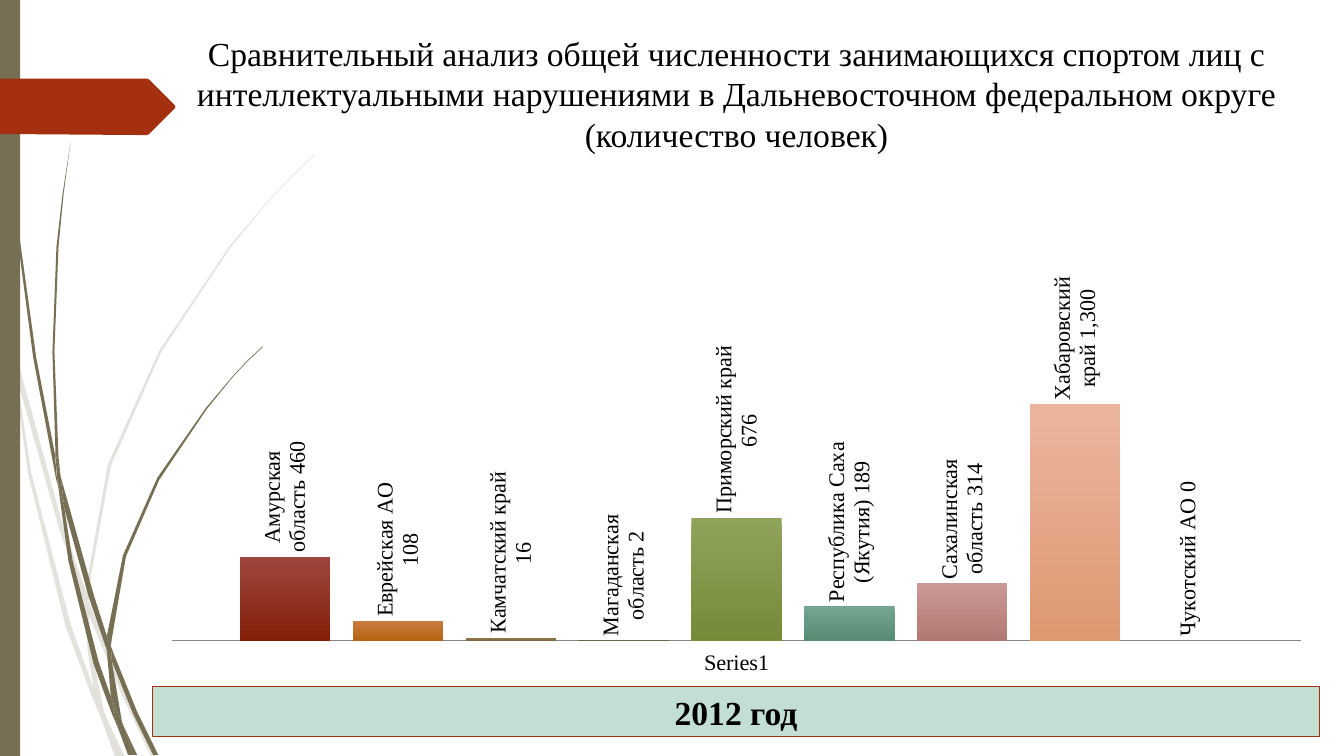
from typing import Any, NamedTuple

from lxml.etree import SubElement
from pptx import Presentation
from pptx.chart.data import CategoryChartData
from pptx.dml.color import RGBColor
from pptx.enum.chart import XL_CHART_TYPE as ChartType
from pptx.enum.chart import XL_LABEL_POSITION as LabelPosition
from pptx.enum.chart import XL_TICK_LABEL_POSITION as TickLabels
from pptx.enum.chart import XL_TICK_MARK as TickMark
from pptx.enum.shapes import MSO_SHAPE as Preset
from pptx.enum.text import MSO_ANCHOR as Anchor
from pptx.enum.text import PP_ALIGN as Align
from pptx.oxml.ns import qn
from pptx.util import Emu, Pt

# The page is a grid of square cells; every place below is a column and a row.
COLUMNS, ROWS, CELL = 1333, 750, 9144

FONT = "Times New Roman"
BLACK = RGBColor(0, 0, 0)
OLIVE = RGBColor(0x76, 0x6F, 0x54)
BRICK = RGBColor(0xA5, 0x30, 0x10)
MINT = RGBColor(0xC3, 0xDE, 0xD3)
GREY = RGBColor(0x86, 0x86, 0x86)

Point = tuple[int, int]


class Area(NamedTuple):
    column: int
    row: int
    columns: int
    rows: int

    def lengths(self) -> list[Emu]:
        return [Emu(cells * CELL) for cells in self]


class Region(NamedTuple):
    name: str
    people: int
    top: RGBColor
    bottom: RGBColor


class Grass(NamedTuple):
    opacity: int
    blades: list[list[Point]]


REGIONS = [
    Region("Амурская область", 460, RGBColor(0x9E, 0x46, 0x3D), RGBColor(0x83, 0x1F, 0x08)),
    Region("Еврейская АО", 108, RGBColor(0xC9, 0x7C, 0x42), RGBColor(0xB5, 0x64, 0x0F)),
    Region("Камчатский край", 16, RGBColor(0x94, 0x7B, 0x55), RGBColor(0x80, 0x68, 0x3E)),
    Region("Магаданская область", 2, RGBColor(0x71, 0x82, 0x57), RGBColor(0x5B, 0x6C, 0x41)),
    Region("Приморский край", 676, RGBColor(0x8F, 0xA3, 0x5B), RGBColor(0x75, 0x8B, 0x38)),
    Region("Республика Саха (Якутия)", 189, RGBColor(0x73, 0xA5, 0x90), RGBColor(0x56, 0x8B, 0x74)),
    Region("Сахалинская область", 314, RGBColor(0xCB, 0x99, 0x96), RGBColor(0xB2, 0x79, 0x73)),
    Region("Хабаровский край", 1300, RGBColor(0xEB, 0xB5, 0x9D), RGBColor(0xDE, 0x98, 0x72)),
    Region("Чукотский АО", 0, RGBColor(0xD9, 0xC8, 0xA5), RGBColor(0xC4, 0xB0, 0x88)),
]

PALE_GRASS = Grass(20, [
    [(11, 350), (9, 322), (0, 282), (0, 299), (10, 344)],
    [(58, 522), (84, 599), (85, 586), (62, 520), (14, 345), (17, 376)],
    [(92, 607), (88, 596), (88, 610), (123, 694), (150, 751), (155, 751), (127, 692)],
    [(119, 751), (124, 751), (105, 711)],
    [(93, 683), (70, 619), (31, 469), (17, 376), (11, 350), (28, 470), (65, 621), (92, 693),
     (101, 714), (99, 707)],
    [(84, 599), (87, 646), (93, 683), (96, 692), (105, 711), (103, 706), (91, 646), (88, 610),
     (88, 608)],
    [(88, 584), (110, 462), (160, 349), (229, 245), (268, 198), (290, 175), (312, 154),
     (312, 153), (289, 175), (268, 197), (228, 244), (158, 348), (107, 461), (85, 584),
     (85, 586), (88, 596)],
    [(101, 714), (114, 751), (119, 751)],
    [(88, 608), (88, 610), (88, 596), (85, 586), (84, 599)],
    [(96, 692), (93, 683), (99, 707), (101, 714), (119, 751), (105, 711)],
])

DARK_GRASS = Grass(100, [
    [(7, 110), (17, 233), (33, 355), (56, 477), (57, 481), (55, 457), (55, 453), (36, 355),
     (19, 232), (8, 109), (5, 48), (4, 0), (3, 0), (4, 48)],
    [(88, 592), (106, 645), (106, 633), (106, 631), (93, 590), (60, 472), (64, 505)],
    [(113, 649), (110, 641), (111, 656), (132, 708), (152, 749), (157, 749), (136, 706)],
    [(110, 691), (98, 657), (72, 556), (64, 505), (57, 477), (68, 557), (93, 659), (111, 708),
     (117, 722), (116, 717)],
    [(60, 472), (58, 453), (54, 349), (58, 245), (63, 193), (70, 141), (62, 193), (56, 245),
     (52, 349), (55, 449)],
    [(133, 749), (136, 749), (122, 719)],
    [(57, 477), (64, 505), (60, 472), (55, 449), (55, 453)],
    [(111, 633), (125, 552), (158, 476), (205, 406), (231, 374), (245, 359), (261, 344),
     (260, 344), (245, 358), (231, 373), (204, 405), (156, 474), (122, 551), (106, 631),
     (110, 641)],
    [(117, 722), (127, 749), (131, 749)],
    [(106, 645), (110, 691), (116, 706), (122, 719), (121, 716), (111, 656), (109, 651)],
    [(106, 645), (109, 651), (111, 656), (110, 641), (106, 631), (106, 633)],
    [(116, 706), (110, 691), (116, 717), (117, 722), (130, 749), (133, 749), (122, 719)],
])

ARROW = [(173, 108), (148, 133), (146, 134), (136, 134), (0, 133), (0, 78), (136, 78),
         (146, 78), (148, 79), (173, 104), (174, 106)]

TEXT_FORMAT = {"name": FONT, "size": Pt(24)}
CHART_FORMAT = {"name": FONT, "size": Pt(16)}


def apply_format(target: Any, values: dict[str, Any]) -> None:
    for name, value in values.items():
        setattr(target, name, value)


def style_font(font: Any, values: dict[str, Any]) -> None:
    apply_format(font, values)
    font.color.rgb = BLACK


def paint(shape: Any, color: RGBColor) -> None:
    """Give a flat fill, with no outline and no shadow."""
    shape.shadow.inherit = False
    shape.fill.solid()
    shape.fill.fore_color.rgb = color
    shape.line.fill.background()


def draw_outline(page: Any, points: list[Point], color: RGBColor) -> Any:
    builder = page.shapes.build_freeform(*points[0], scale=float(CELL))
    builder.add_line_segments(points[1:], close=True)
    outline = builder.convert_to_shape()
    paint(outline, color)
    return outline


def draw_grass(page: Any, grass: Grass) -> None:
    for points in grass.blades:
        blade = draw_outline(page, points, OLIVE)
        if grass.opacity < 100:
            color = blade._element.spPr.find(qn("a:solidFill"))[0]
            SubElement(color, qn("a:alpha"), val=str(grass.opacity * 1000))


def draw_rectangle(page: Any, area: Area, color: RGBColor) -> Any:
    box = page.shapes.add_shape(Preset.RECTANGLE, *area.lengths())
    paint(box, color)
    return box


def write_text(box: Any, text: str, bold: bool = False) -> None:
    apply_format(box.text_frame, {"word_wrap": True, "vertical_anchor": Anchor.MIDDLE})
    para = box.text_frame.paragraphs[0]
    para.alignment = Align.CENTER
    span = para.add_run()
    span.text = text
    style_font(span.font, TEXT_FORMAT | {"bold": bold})


def label_bar(series: Any) -> None:
    """Write the region and its value upwards above the bar."""
    labels = series.data_labels
    apply_format(labels, {
        "show_series_name": True, "show_value": True, "number_format": "#,##0",
        "number_format_is_linked": False, "position": LabelPosition.OUTSIDE_END})
    style_font(labels.font, CHART_FORMAT)
    element = labels._element
    body = element.find(qn("c:txPr")).find(qn("a:bodyPr"))
    body.set("rot", "-5400000")
    body.set("vert", "horz")
    separator = SubElement(element, qn("c:separator"))
    separator.text = " "
    element.find(qn("c:showBubbleSize")).addnext(separator)


def place_plot(chart: Any, shares: dict[str, float]) -> None:
    """Fix the inner plot area at shares of the chart's size."""
    plot_area = chart._chartSpace.chart.plotArea
    layout = plot_area.find(qn("c:layout"))
    if layout is None:
        layout = SubElement(plot_area, qn("c:layout"))
        plot_area.insert(0, layout)
    manual = SubElement(layout, qn("c:manualLayout"))
    settings = {"layoutTarget": "inner", "xMode": "edge", "yMode": "edge"} | shares
    for name, value in settings.items():
        SubElement(manual, qn(f"c:{name}"), val=str(value))


def draw_chart(page: Any, area: Area) -> None:
    data = CategoryChartData(number_format="#,##0")
    data.categories = ["Series1"]
    for region in REGIONS:
        data.add_series(region.name, [region.people])
    frame = page.shapes.add_chart(ChartType.COLUMN_CLUSTERED, *area.lengths(), data)
    chart = frame.chart
    apply_format(chart, {"has_legend": False, "has_title": False})
    style_font(chart.font, CHART_FORMAT)
    apply_format(chart.value_axis, {
        "visible": False, "has_major_gridlines": False,
        "minimum_scale": 0, "maximum_scale": 1400})
    apply_format(chart.category_axis, {
        "major_tick_mark": TickMark.NONE, "minor_tick_mark": TickMark.NONE,
        "tick_label_position": TickLabels.LOW})
    chart.category_axis.format.line.color.rgb = GREY
    plot = chart.plots[0]
    apply_format(plot, {"gap_width": 150, "overlap": -25, "vary_by_categories": False})
    for series, region in zip(plot.series, REGIONS):
        fill = series.format.fill
        fill.gradient()
        fill.gradient_angle = 270
        for stop, color in zip(fill.gradient_stops, (region.top, region.bottom)):
            stop.color.rgb = color
        label_bar(series)
    place_plot(chart, {"x": 0.017, "y": 0.438, "w": 0.967, "h": 0.505})


def main() -> None:
    deck = Presentation()
    apply_format(deck, {"slide_width": Emu(COLUMNS * CELL), "slide_height": Emu(ROWS * CELL)})
    page = deck.slides.add_slide(deck.slide_layouts[6])
    for grass in (PALE_GRASS, DARK_GRASS):
        draw_grass(page, grass)
    draw_rectangle(page, Area(0, 0, 20, ROWS), OLIVE)
    draw_outline(page, ARROW, BRICK)
    title = page.shapes.add_textbox(*Area(146, 27, 1169, 131).lengths())
    write_text(title, "Сравнительный анализ общей численности занимающихся спортом лиц с "
                      "интеллектуальными нарушениями в Дальневосточном федеральном округе "
                      "(количество человек)")
    draw_chart(page, Area(151, 164, 1158, 506))
    year = draw_rectangle(page, Area(151, 681, 1158, 50), MINT)
    year.line.color.rgb = BRICK
    year.line.width = Pt(0.75)
    write_text(year, "2012 год", bold=True)
    deck.save("out.pptx")


if __name__ == "__main__":
    main()
